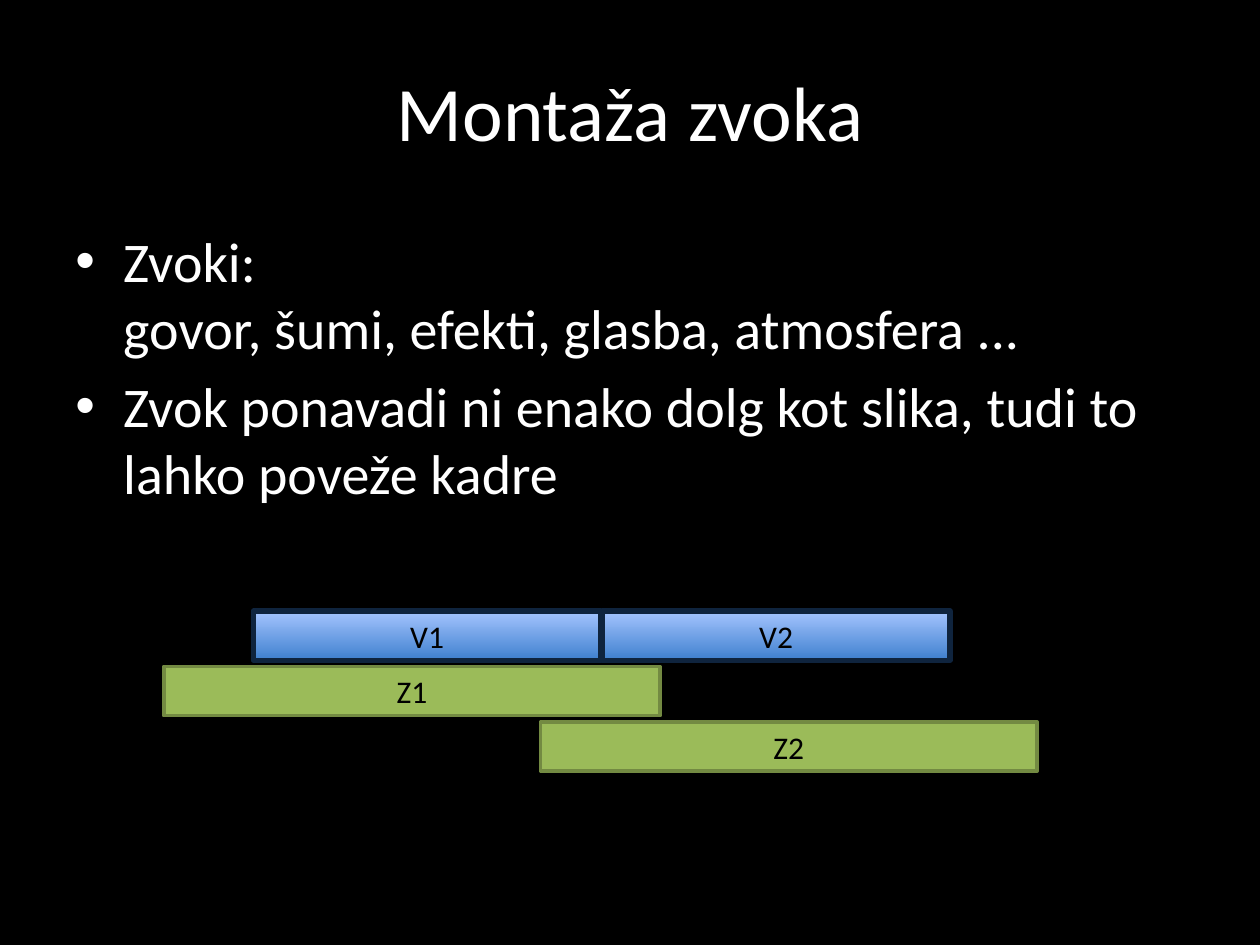
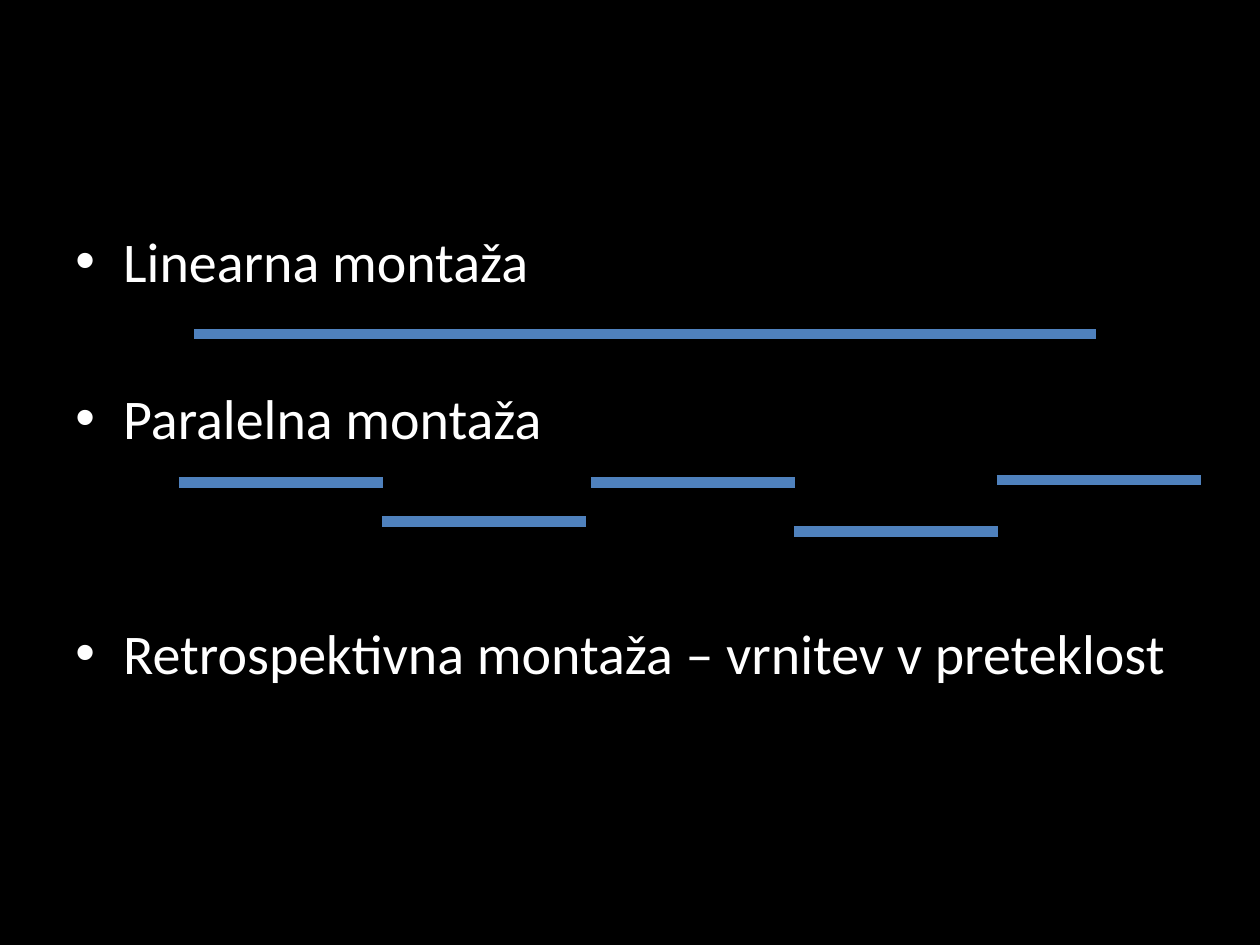
from lxml.etree import SubElement as Sub
from pptx import Presentation
from pptx.dml.color import RGBColor as RGB
from pptx.enum.shapes import MSO_CONNECTOR as Link, MSO_SHAPE as Shape
from pptx.enum.text import MSO_ANCHOR as Anchor, PP_ALIGN as Align
from pptx.oxml.ns import qn
from pptx.util import Inches, Pt

FONT = "Calibri"
INK = {
    "back": "000000", "text": "FFFFFF", "label": "000000",
    "low": "3F80CE", "high": "A4C4FF", "video": "0F243E",
    "sound": "9BBB59", "edge": "738A42", "line": "4F81BD",
}
GAP, ROW = 6, 45  # points before a bullet, and for each row left free above it


def tint(name):
    return RGB.from_string(INK[name])


def add_slide(deck):
    slide = deck.slides.add_slide(deck.slide_layouts[6])
    fill = slide.background.fill
    fill.solid()
    fill.fore_color.rgb = tint("back")
    return slide


def add_run(para, text, size, color):
    run = para.add_run()
    run.text = text
    run.font.name = FONT
    run.font.size = Pt(size)
    run.font.color.rgb = tint(color)


def add_box(slide, top, height):
    box = slide.shapes.add_textbox(Inches(0.5), Inches(top), Inches(9), Inches(height))
    box.text_frame.word_wrap = True
    return box.text_frame


def add_title(slide, text):
    frame = add_box(slide, 0.25, 1.25)
    frame.vertical_anchor = Anchor.MIDDLE
    para = frame.paragraphs[0]
    para.alignment = Align.CENTER
    add_run(para, text, 44, "text")


def add_list(slide, items):
    """Each item is (free rows above, lines of text)."""
    frame = add_box(slide, 1.75, 4.95)
    for i, (rows, lines) in enumerate(items):
        para = frame.add_paragraph() if i else frame.paragraphs[0]
        props = para._p.get_or_add_pPr()
        props.set("marL", str(Inches(0.38)))
        props.set("indent", str(-Inches(0.38)))
        Sub(props, qn("a:buFont"), typeface="Arial")
        Sub(props, qn("a:buChar"), char="•")
        if i:
            para.space_before = Pt(GAP + ROW * rows)
        for j, line in enumerate(lines):
            if j:
                para.add_line_break()
            add_run(para, line, 32, "text")


def add_clip(slide, text, left, top, width, edge, weight):
    clip = slide.shapes.add_shape(
        Shape.RECTANGLE, Inches(left), Inches(top), Inches(width), Inches(0.39))
    clip.shadow.inherit = False
    clip.line.color.rgb = tint(edge)
    clip.line.width = Pt(weight)
    frame = clip.text_frame
    frame.vertical_anchor = Anchor.MIDDLE
    para = frame.paragraphs[0]
    para.alignment = Align.CENTER
    add_run(para, text, 18, "label")
    return clip.fill


def add_video(slide, text, left):
    fill = add_clip(slide, text, left, 4.85, 2.76, "video", 3)
    fill.gradient()
    fill.gradient_angle = 90
    for stop, name in zip(fill.gradient_stops, ("low", "high")):
        stop.color.rgb = tint(name)


def add_sound(slide, text, left, top):
    fill = add_clip(slide, text, left, top, 3.94, "edge", 2)
    fill.solid()
    fill.fore_color.rgb = tint("sound")


def add_line(slide, left, right, top):
    line = slide.shapes.add_connector(
        Link.STRAIGHT, Inches(left), Inches(top), Inches(right), Inches(top))
    line.line.color.rgb = tint("line")
    line.line.width = Pt(6)
    Sub(line._element.spPr, qn("a:effectLst"))


def draw_sound(deck):
    slide = add_slide(deck)
    add_title(slide, "Montaža zvoka")
    add_list(slide, [
        (0, ["Zvoki:", "govor, šumi, efekti, glasba, atmosfera ..."]),
        (0, ["Zvok ponavadi ni enako dolg kot slika, tudi to lahko poveže kadre"]),
    ])
    add_video(slide, "V1", 2.01)
    add_video(slide, "V2", 4.78)
    add_sound(slide, "Z1", 1.3, 5.29)
    add_sound(slide, "Z2", 4.29, 5.73)


def draw_kinds(deck):
    slide = add_slide(deck)
    add_list(slide, [
        (0, ["Linearna montaža"]),
        (1, ["Paralelna montaža"]),
        (2, ["Retrospektivna montaža – vrnitev v preteklost"]),
    ])
    add_line(slide, 1.54, 8.7, 2.65)
    for left, top in ((1.42, 3.83), (3.03, 4.14), (4.69, 3.83),
                      (6.3, 4.22), (7.91, 3.81)):
        add_line(slide, left, left + 1.62, top)


def main():
    deck = Presentation()
    deck.slide_width, deck.slide_height = Inches(10), Inches(7.5)
    draw_sound(deck)
    draw_kinds(deck)
    deck.save("out.pptx")


if __name__ == "__main__":
    main()
